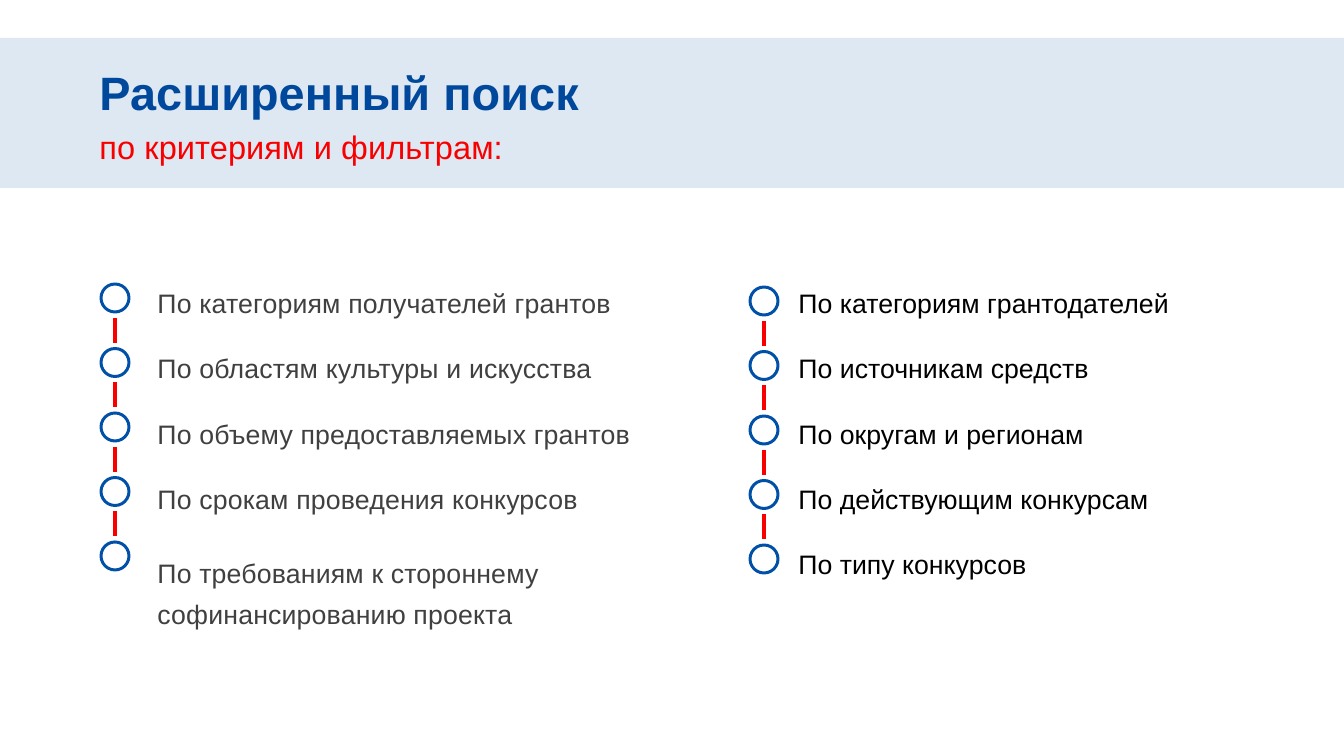
from pptx import Presentation
from pptx.dml.color import RGBColor as Rgb
from pptx.enum.shapes import MSO_CONNECTOR as Link, MSO_SHAPE as Kind
from pptx.enum.text import MSO_ANCHOR as Anchor
from pptx.util import Pt
from lxml.etree import SubElement as Sub
from pptx.oxml.ns import qn

BLUE = Rgb(0x00, 0x50, 0xA8)
NAVY = Rgb(0x00, 0x48, 0x9B)
RED = Rgb(0xF9, 0x00, 0x00)
GREY = Rgb(0x40, 0x40, 0x40)
BLACK = Rgb(0x00, 0x00, 0x00)

PX = 9525
SIZE = (1344, 756)
BAND = (0, 38, 1344, 150)
HEAD = (90, 40, 747, 150)
TITLE = [
    ("Расширенный поиск", dict(size=Pt(35.1), bold=True), NAVY, 0),
    ("по критериям и фильтрам:", dict(size=Pt(24.4), bold=False), RED, 5),
]
LISTS = [
    dict(box=(148, 282, 625, 343), dots=(101, 284), color=GREY, track=10, items=[
        "По категориям получателей грантов",
        "По областям культуры и искусства",
        "По объему предоставляемых грантов",
        "По срокам проведения конкурсов",
        "По требованиям к стороннему\nсофинансированию проекта",
    ]),
    dict(box=(789, 282, 498, 300), dots=(750, 287), color=BLACK, track=0, items=[
        "По категориям грантодателей",
        "По источникам средств",
        "По округам и регионам",
        "По действующим конкурсам",
        "По типу конкурсов",
    ]),
]
DOT, STEP, GAP, DASH = 28, 64.5, 34, 25


def emu(*vals):
    return [round(v * PX) for v in vals]


def add_box(slide, box):
    frame = slide.shapes.add_textbox(*emu(*box)).text_frame
    frame.word_wrap = True
    return frame


def add_line(frame, first, text, form, color, track, **gaps):
    para = frame.paragraphs[0] if first else frame.add_paragraph()
    for key, val in gaps.items():
        setattr(para, key, val)
    run = para.add_run()
    run.text = text
    for key, val in dict(name="Arial", **form).items():
        setattr(run.font, key, val)
    run.font.color.rgb = color
    if track:
        run._r.get_or_add_rPr().set("spc", str(track))


def add_head(slide):
    band = slide.shapes.add_shape(Kind.RECTANGLE, *emu(*BAND))
    band.shadow.inherit = False
    band.fill.solid()
    band.fill.fore_color.rgb = BLUE
    tint = band._element.spPr.find(".//" + qn("a:srgbClr"))
    Sub(tint, qn("a:alpha"), val="13000")
    band.line.fill.background()
    frame = add_box(slide, HEAD)
    frame.vertical_anchor = Anchor.MIDDLE
    for i, (text, form, color, gap) in enumerate(TITLE):
        add_line(frame, i == 0, text, form, color, 10, space_before=Pt(gap))


def add_items(slide, part):
    frame = add_box(slide, part["box"])
    for i, item in enumerate(part["items"]):
        rows = item.split("\n")
        for j, row in enumerate(rows):
            add_line(frame, i + j == 0, row, dict(size=Pt(20)), part["color"],
                     part["track"], space_before=Pt(25 if i and not j else 0),
                     line_spacing=1.27 if len(rows) > 1 else 1.0)


def add_chain(slide, left, top, count):
    group = slide.shapes.add_group_shape().shapes
    for i in range(count):
        y = top + i * STEP
        dot = group.add_shape(Kind.OVAL, *emu(left, y, DOT, DOT))
        dot.shadow.inherit = False
        dot.fill.background()
        dot.line.color.rgb = BLUE
        dot.line.width = Pt(2.25)
        if i < count - 1:
            mid, y = left + DOT / 2, y + GAP
            dash = group.add_connector(Link.STRAIGHT, *emu(mid, y, mid, y + DASH))
            dash.line.color.rgb = RED
            dash.line.width = Pt(3)
            Sub(dash._element.spPr, qn("a:effectLst"))


def main():
    deck = Presentation()
    deck.slide_width, deck.slide_height = emu(*SIZE)
    slide = deck.slides.add_slide(deck.slide_layouts[6])
    add_head(slide)
    for part in LISTS:
        add_items(slide, part)
        add_chain(slide, *part["dots"], len(part["items"]))
    deck.save("out.pptx")


if __name__ == "__main__":
    main()
